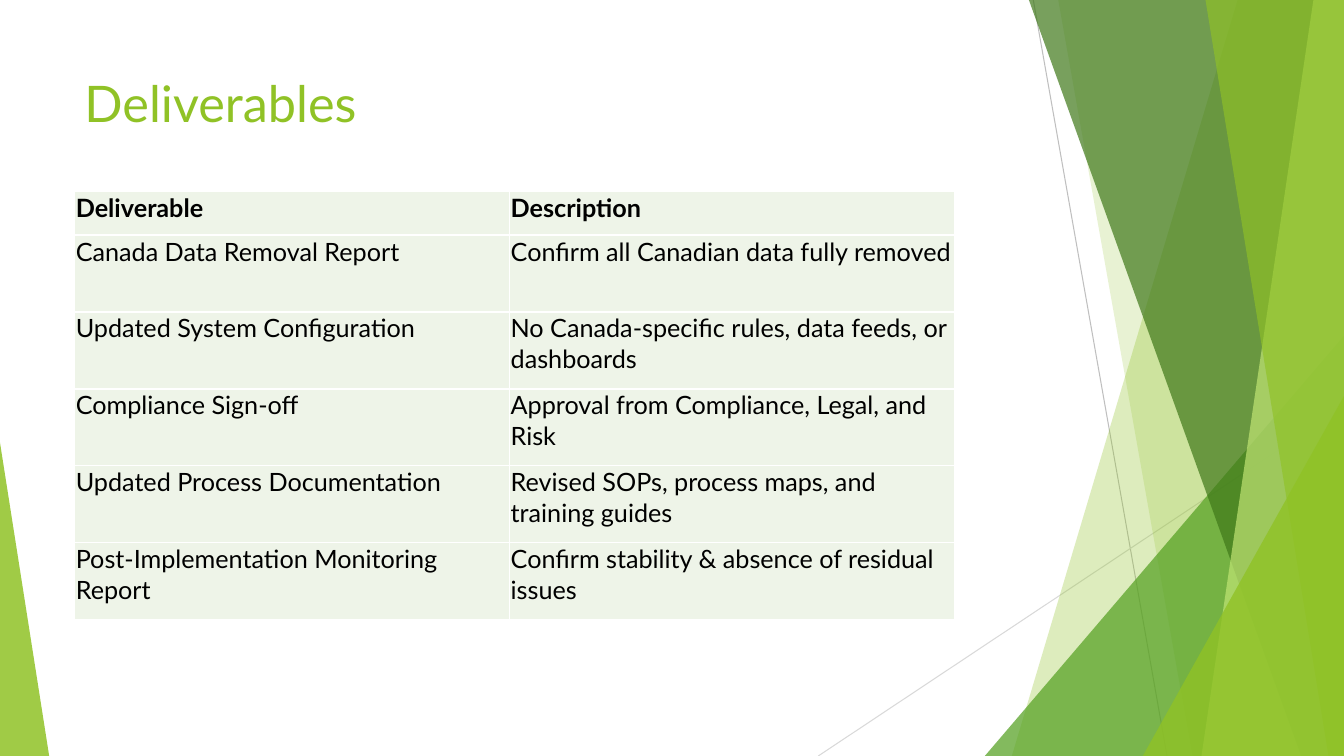
from lxml import etree
from pptx import Presentation
from pptx.dml.color import RGBColor
from pptx.enum.shapes import MSO_CONNECTOR, MSO_SHAPE
from pptx.oxml.ns import qn
from pptx.util import Cm, Pt

STRAIGHT = MSO_CONNECTOR.STRAIGHT
TRIANGLE = MSO_SHAPE.ISOSCELES_TRIANGLE
WIDTH, HEIGHT = 33.87, 19.05

ROWS = [
    ("Deliverable", "Description"),
    ("Canada Data Removal Report", "Confirm all Canadian data fully removed"),
    ("Updated System Configuration", "No Canada-specific rules, data feeds, or dashboards"),
    ("Compliance Sign-off", "Approval from Compliance, Legal, and Risk"),
    ("Updated Process Documentation", "Revised SOPs, process maps, and training guides"),
    ("Post-Implementation Monitoring Report", "Confirm stability & absence of residual issues"),
]


def rgb(color):
    return RGBColor.from_string(color)


class SlideBuilder:
    font = "Lato"
    green = "90C226"
    text_color = "000000"
    cell_fill = "EEF4E8"
    border = "FFFFFF"

    def __init__(self, slide):
        self.slide = slide
        self.shapes = slide.shapes

    def background(self, color):
        fill = self.slide.background.fill
        fill.solid()
        fill.fore_color.rgb = rgb(color)

    def line(self, x1, y1, x2, y2, color):
        c = self.shapes.add_connector(STRAIGHT, Cm(x1), Cm(y1), Cm(x2), Cm(y2))
        c.line.color.rgb = rgb(color)
        c.line.width = Pt(0.75)
        etree.SubElement(c._element.spPr, qn("a:effectLst"))

    def paint(self, sp, color, opacity):
        sp.shadow.inherit = False
        sp.line.fill.background()
        sp.fill.solid()
        sp.fill.fore_color.rgb = rgb(color)
        clr = sp._element.spPr.find(".//" + qn("a:srgbClr"))
        etree.SubElement(clr, qn("a:alpha"), val=str(opacity * 1000))

    def band(self, top_x, bottom_x, color, opacity):
        fb = self.shapes.build_freeform(Cm(top_x), 0)
        corners = [(WIDTH, 0), (WIDTH, HEIGHT), (bottom_x, HEIGHT)]
        fb.add_line_segments([(Cm(x), Cm(y)) for x, y in corners], close=True)
        self.paint(fb.convert_to_shape(), color, opacity)

    def triangle(self, x, y, w, apex, color, opacity):
        sp = self.shapes.add_shape(TRIANGLE, Cm(x), Cm(y), Cm(w), Cm(HEIGHT - y))
        sp.adjustments[0] = apex
        self.paint(sp, color, opacity)

    def style(self, p, size, color, bold=False):
        p.font.name = self.font
        p.font.size = Pt(size)
        p.font.bold = bold
        p.font.color.rgb = rgb(color)

    def title(self, text, x, y, w, h):
        tf = self.shapes.add_textbox(Cm(x), Cm(y), Cm(w), Cm(h)).text_frame
        tf.word_wrap = True
        p = tf.paragraphs[0]
        p.text = text
        self.style(p, 36, self.green)

    def cell(self, cell, text, bold):
        cell.margin_left = cell.margin_right = cell.margin_top = Cm(0.03)
        cell.margin_bottom = 0
        cell.fill.solid()
        cell.fill.fore_color.rgb = rgb(self.cell_fill)
        p = cell.text_frame.paragraphs[0]
        p.text = text
        self.style(p, 18, self.text_color, bold)
        tcPr = cell._tc.get_or_add_tcPr()
        for i, side in enumerate(("lnL", "lnR", "lnT", "lnB")):
            ln = etree.Element(qn("a:" + side), w=str(Pt(1)))
            fill = etree.SubElement(ln, qn("a:solidFill"))
            etree.SubElement(fill, qn("a:srgbClr"), val=self.border)
            tcPr.insert(i, ln)

    def table(self, rows, x, y, widths, heights):
        frame = self.shapes.add_table(len(rows), len(widths), Cm(x), Cm(y),
                                      Cm(sum(widths)), Cm(sum(heights)))
        tbl = frame.table
        for column, w in zip(tbl.columns, widths):
            column.width = Cm(w)
        for r, (texts, h) in enumerate(zip(rows, heights)):
            tbl.rows[r].height = Cm(h)
            for c, text in enumerate(texts):
                self.cell(tbl.cell(r, c), text, bold=r == 0)


def main():
    prs = Presentation()
    prs.slide_width, prs.slide_height = Cm(WIDTH), Cm(HEIGHT)
    s = SlideBuilder(prs.slides.add_slide(prs.slide_layouts[6]))

    s.background("FFFFFF")
    s.line(26.04, 0, 29.41, HEIGHT, "BFBFBF")
    s.line(WIDTH, 10.24, 20.62, HEIGHT, "D9D9D9")
    s.band(31.19, 25.5, s.green, 30)
    s.band(26.67, 30.05, s.green, 20)
    s.triangle(24.82, 8.46, 9.05, 1, "54A021", 72)
    s.band(25.93, 32.79, "3F7819", 70)
    s.band(33.1, 30.28, "C0E474", 70)
    s.band(30.38, 33.48, s.green, 65)
    s.triangle(28.8, 9.98, 5.07, 1, s.green, 80)
    s.triangle(0, 11.15, 1.24, 0, s.green, 85)

    s.title("Deliverables", 1.88, 1.7, 23.88, 3.66)
    s.table(ROWS, 1.88, 4.83, [10.96, 11.22], [1.09] + [1.94] * 5)
    prs.save("out.pptx")


if __name__ == "__main__":
    main()
